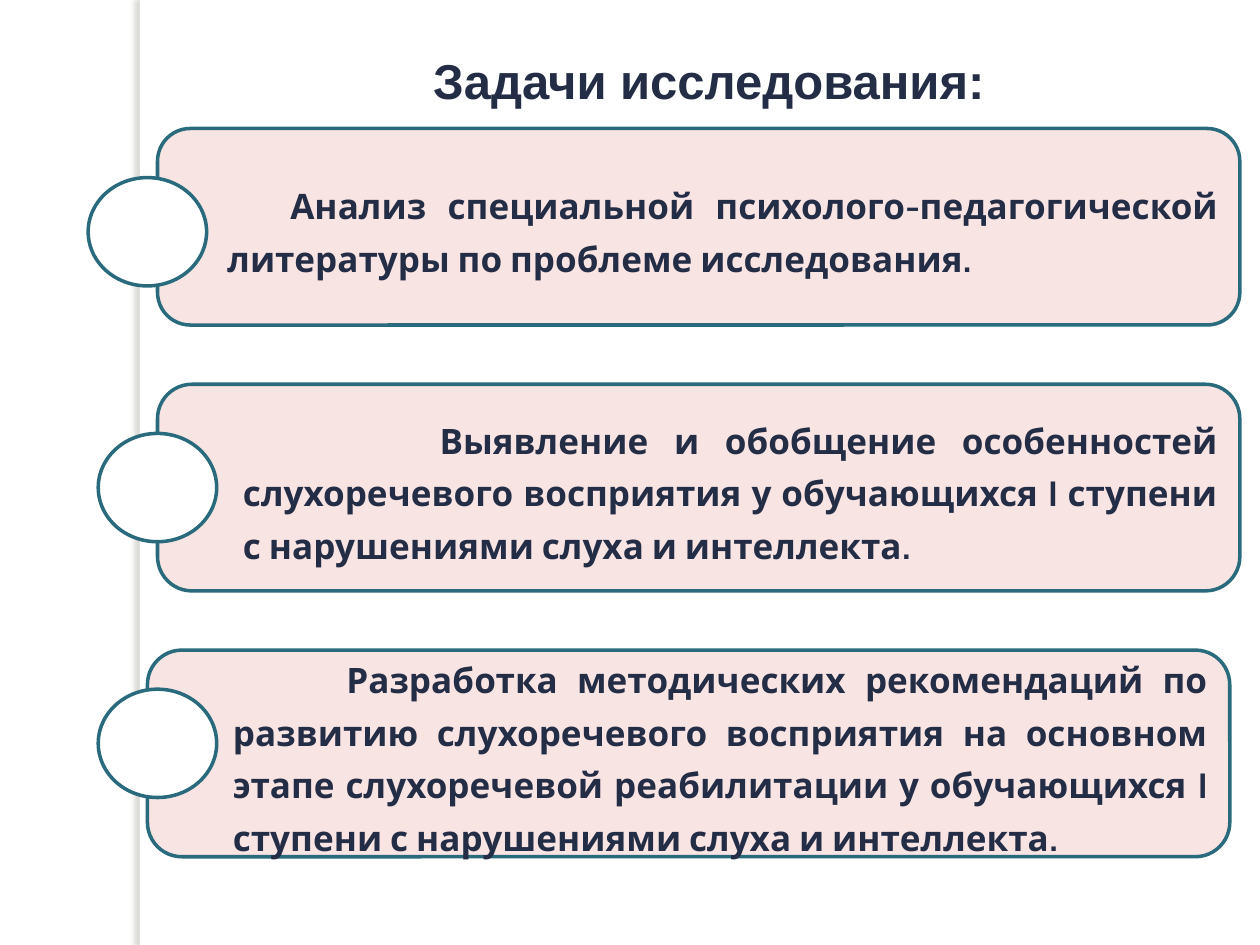
from dataclasses import dataclass

from lxml.etree import SubElement
from pptx import Presentation
from pptx.dml.color import RGBColor
from pptx.enum.shapes import MSO_SHAPE
from pptx.enum.text import MSO_ANCHOR, MSO_AUTO_SIZE, PP_ALIGN
from pptx.oxml.ns import qn
from pptx.util import Inches, Pt

WIDTH, HEIGHT = 10, 7.5
INK, TEAL, PINK, WHITE = "242D46", "296B7C", "F5D3D3", "FFFFFF"
CARD_WIDTH = 8.59
CIRCLE_WIDTH, CIRCLE_HEIGHT = 0.94, 0.86
FIRST_CIRCLE_TOP, CIRCLE_STEP = 1.41, 2.03


@dataclass
class Task:
    text: str
    left: float
    top: float
    height: float
    circle_left: float
    margin: float
    first_line: float


TASKS = [
    Task("Анализ специальной психолого-педагогической литературы по проблеме "
         "исследования.", 1.25, 1.02, 1.56, 0.7, 0.38, 0.5),
    Task("Выявление и обобщение особенностей слухоречевого восприятия у обучающихся "
         "I ступени с нарушениями слуха и интеллекта.",
         1.25, 3.05, 1.64, 0.78, 0.5, 1.56),
    Task("Разработка методических рекомендаций по развитию слухоречевого восприятия "
         "на основном этапе слухоречевой реабилитации у обучающихся I ступени с "
         "нарушениями слуха и интеллекта.", 1.17, 5.16, 1.64, 0.78, 0.5, 0.9),
]


def colour(value: str) -> RGBColor:
    return RGBColor.from_string(value)


def write_text(shape, text: str, *, font: str, size: float, align, spacing,
               margin: float = 0, first_line: float = 0) -> None:
    frame = shape.text_frame
    frame.word_wrap = True
    frame.vertical_anchor = MSO_ANCHOR.MIDDLE
    paragraph = frame.paragraphs[0]
    paragraph.alignment = align
    paragraph.line_spacing = spacing
    properties = paragraph._p.get_or_add_pPr()
    properties.set("marL", str(Inches(margin)))
    properties.set("indent", str(Inches(first_line)))
    run = paragraph.add_run()
    run.text = text
    run.font.name = font
    run.font.size = Pt(size)
    run.font.bold = True
    run.font.color.rgb = colour(INK)


def add_figure(slide, kind, left: float, top: float, width: float, height: float,
               *, fill: str, line: str | None = None, opacity: int = 100):
    shape = slide.shapes.add_shape(
        kind, Inches(left), Inches(top), Inches(width), Inches(height))
    shape.shadow.inherit = False
    shape.fill.solid()
    shape.fill.fore_color.rgb = colour(fill)
    if opacity < 100:
        fill_colour = shape._element.spPr.find(".//" + qn("a:srgbClr"))
        SubElement(fill_colour, qn("a:alpha"), val=str(opacity * 1000))
    if line:
        shape.line.color.rgb = colour(line)
        shape.line.width = Pt(2)
    else:
        shape.line.fill.background()
    return shape


def add_shaded_edge(slide) -> None:
    edge = add_figure(slide, MSO_SHAPE.RECTANGLE, 1.11, 0, 0.08, HEIGHT, fill=WHITE)
    effects = edge._element.spPr.find(qn("a:effectLst"))
    shadow = SubElement(effects, qn("a:outerShdw"), blurRad=str(Pt(3)),
                        dist=str(Pt(3)), dir=str(180 * 60000), rotWithShape="0")
    shadow_colour = SubElement(shadow, qn("a:srgbClr"), val="736F63")
    SubElement(shadow_colour, qn("a:alpha"), val="25000")


def add_title(slide) -> None:
    title = slide.shapes.title
    title.left, title.top = Inches(1.09), Inches(0.16)
    title.width, title.height = Inches(8.67), Inches(0.72)
    write_text(title, "Задачи исследования:", font="Arial", size=28,
               align=PP_ALIGN.CENTER, spacing=1.5, first_line=0.4)
    title.text_frame.auto_size = MSO_AUTO_SIZE.SHAPE_TO_FIT_TEXT


def add_task(slide, task: Task, circle_top: float) -> None:
    card = add_figure(slide, MSO_SHAPE.ROUNDED_RECTANGLE, task.left, task.top,
                      CARD_WIDTH, task.height, fill=PINK, line=TEAL, opacity=60)
    write_text(card, task.text, font="Cabin", size=20, align=PP_ALIGN.JUSTIFY,
               spacing=Pt(30), margin=task.margin, first_line=task.first_line)
    add_figure(slide, MSO_SHAPE.OVAL, task.circle_left, circle_top,
               CIRCLE_WIDTH, CIRCLE_HEIGHT, fill=WHITE, line=TEAL)


def main() -> None:
    presentation = Presentation()
    presentation.slide_width, presentation.slide_height = Inches(WIDTH), Inches(HEIGHT)
    title_only = presentation.slide_layouts[5]
    slide = presentation.slides.add_slide(title_only)
    add_shaded_edge(slide)
    add_title(slide)
    for row, task in enumerate(TASKS):
        add_task(slide, task, FIRST_CIRCLE_TOP + row * CIRCLE_STEP)
    presentation.save("out.pptx")


if __name__ == "__main__":
    main()
